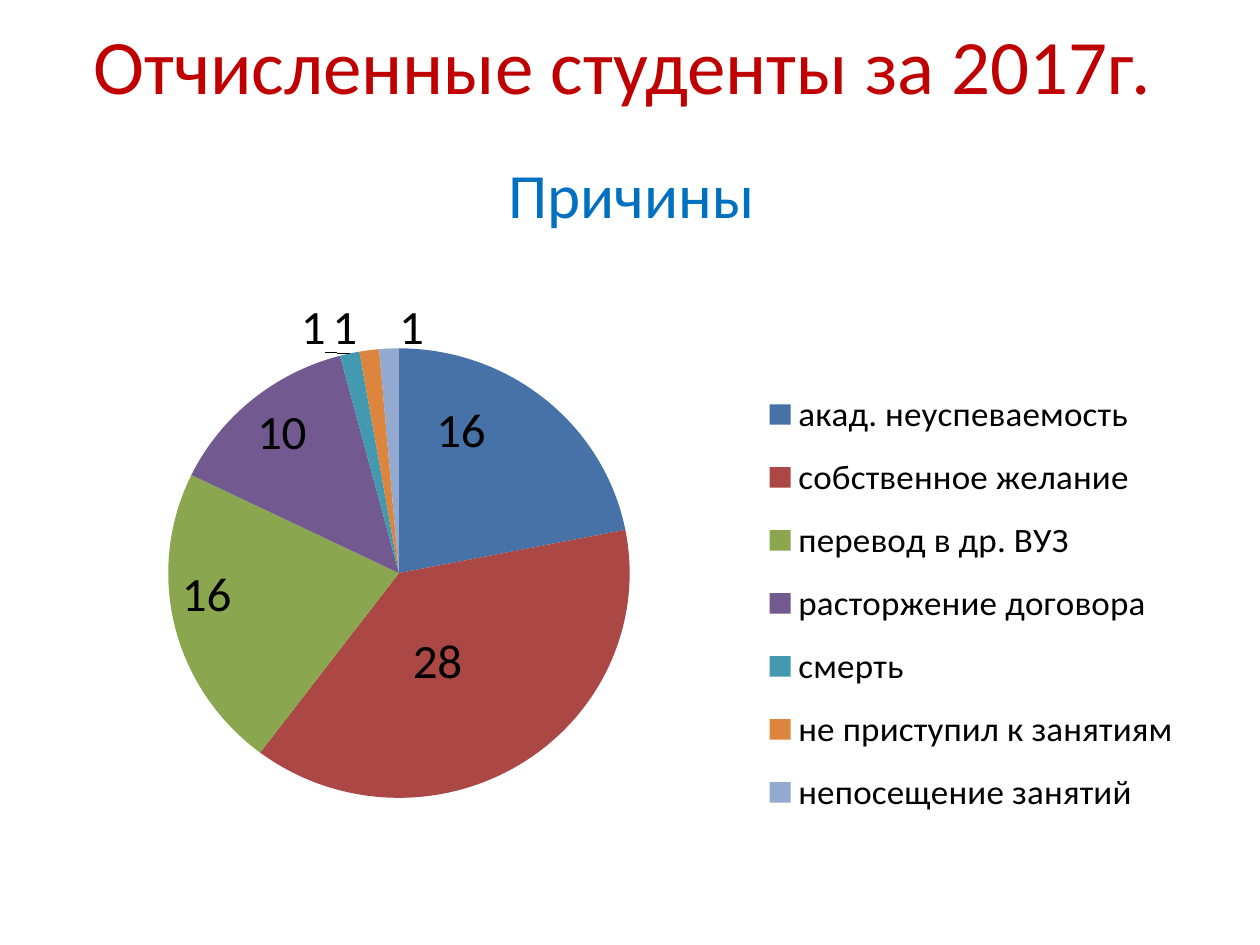
from lxml.etree import SubElement
from pptx import Presentation
from pptx.chart.data import CategoryChartData
from pptx.dml.color import RGBColor
from pptx.enum.chart import XL_CHART_TYPE, XL_LABEL_POSITION, XL_LEGEND_POSITION
from pptx.enum.text import MSO_ANCHOR, PP_ALIGN
from pptx.oxml.ns import qn
from pptx.util import Cm, Pt

FONT = "Calibri"
REASONS = [
    ("акад. неуспеваемость", 16, "4672A8"),
    ("собственное желание", 28, "AB4744"),
    ("перевод в др. ВУЗ", 16, "8AA64F"),
    ("расторжение договора", 10, "725990"),
    ("смерть", 1, "4299B0"),
    ("не приступил к занятиям", 1, "DC853E"),
    ("непосещение занятий", 1, "93A9D0"),
]
CENTER, OUTSIDE = XL_LABEL_POSITION.CENTER, XL_LABEL_POSITION.OUTSIDE_END
MOVED_LABELS = {
    0: (CENTER, -0.01, -0.09),
    1: (CENTER, -0.02, -0.01),
    4: (OUTSIDE, -0.02, 0.01),
    5: (OUTSIDE, -0.01, 0.01),
    6: (OUTSIDE, 0.02, 0.01),
}


def color(value):
    return RGBColor.from_string(value)


def style_font(font, size, value="000000"):
    font.name = FONT
    font.size = Pt(size)
    font.color.rgb = color(value)


def place(shape, box):
    shape.left, shape.top, shape.width, shape.height = map(Cm, box)


def fill_heading(shape, box, text, size, value):
    place(shape, box)
    frame = shape.text_frame
    frame.word_wrap = True
    frame.vertical_anchor = MSO_ANCHOR.MIDDLE
    paragraph = frame.paragraphs[0]
    paragraph.text = text
    paragraph.alignment = PP_ALIGN.CENTER
    style_font(paragraph.font, size, value)


def set_layout(parent, index, settings):
    for old in parent.findall(qn("c:layout")):
        parent.remove(old)
    layout = parent.makeelement(qn("c:layout"))
    manual = SubElement(layout, qn("c:manualLayout"))
    for name, value in settings.items():
        SubElement(manual, qn(f"c:{name}")).set("val", str(value))
    parent.insert(index, layout)


def frame_layout(x, y, w, h):
    return {"xMode": "edge", "yMode": "edge", "x": x, "y": y, "w": w, "h": h}


def label_slices(series):
    labels = series.data_labels
    labels.show_value = True
    labels.position = XL_LABEL_POSITION.INSIDE_END
    style_font(labels.font, 28)
    for index, (position, _, _) in MOVED_LABELS.items():
        label = series.points[index].data_label
        style_font(label.font, 28)
        label.position = position
    elements = series._element.xpath("c:dLbls/c:dLbl")
    for element, (_, x, y) in zip(elements, MOVED_LABELS.values()):
        set_layout(element, 1, {"x": x, "y": y})


def add_reasons_pie(page, box):
    data = CategoryChartData()
    data.categories = [name for name, _, _ in REASONS]
    data.add_series("Причины", [count for _, count, _ in REASONS])
    chart = page.shapes.add_chart(XL_CHART_TYPE.PIE, *map(Cm, box), data).chart
    chart.has_title = False
    style_font(chart.font, 18)

    chart.has_legend = True
    legend = chart.legend
    legend.position = XL_LEGEND_POSITION.RIGHT
    legend.include_in_layout = False
    style_font(legend.font, 20)
    set_layout(legend._element, 1, frame_layout(0.61, 0.12, 0.38, 0.76))

    plot = chart.plots[0]
    plot.vary_by_categories = True
    set_layout(plot._element.getparent(), 0, {
        "layoutTarget": "inner", **frame_layout(0.02, 0.08, 0.55, 0.74)})
    series = plot.series[0]
    for index, (_, _, value) in enumerate(REASONS):
        fill = series.points[index].format.fill
        fill.solid()
        fill.fore_color.rgb = color(value)
    label_slices(series)


def main():
    deck = Presentation()
    deck.slide_width, deck.slide_height = Cm(25.4), Cm(19.05)
    page = deck.slides.add_slide(deck.slide_layouts[5])
    left, width = 1.3, 22.86
    fill_heading(page.shapes.title, (left, 0.1, width, 2.36),
                 "Отчисленные студенты за 2017г. ", 44, "C00000")
    add_reasons_pie(page, (left, 5.72, width, 12.57))
    subtitle_box = (left, 2.72, width, 2.36)
    subtitle = page.shapes.add_textbox(*map(Cm, subtitle_box))
    fill_heading(subtitle, subtitle_box, "Причины", 36, "0070C0")
    deck.save("out.pptx")


if __name__ == "__main__":
    main()
